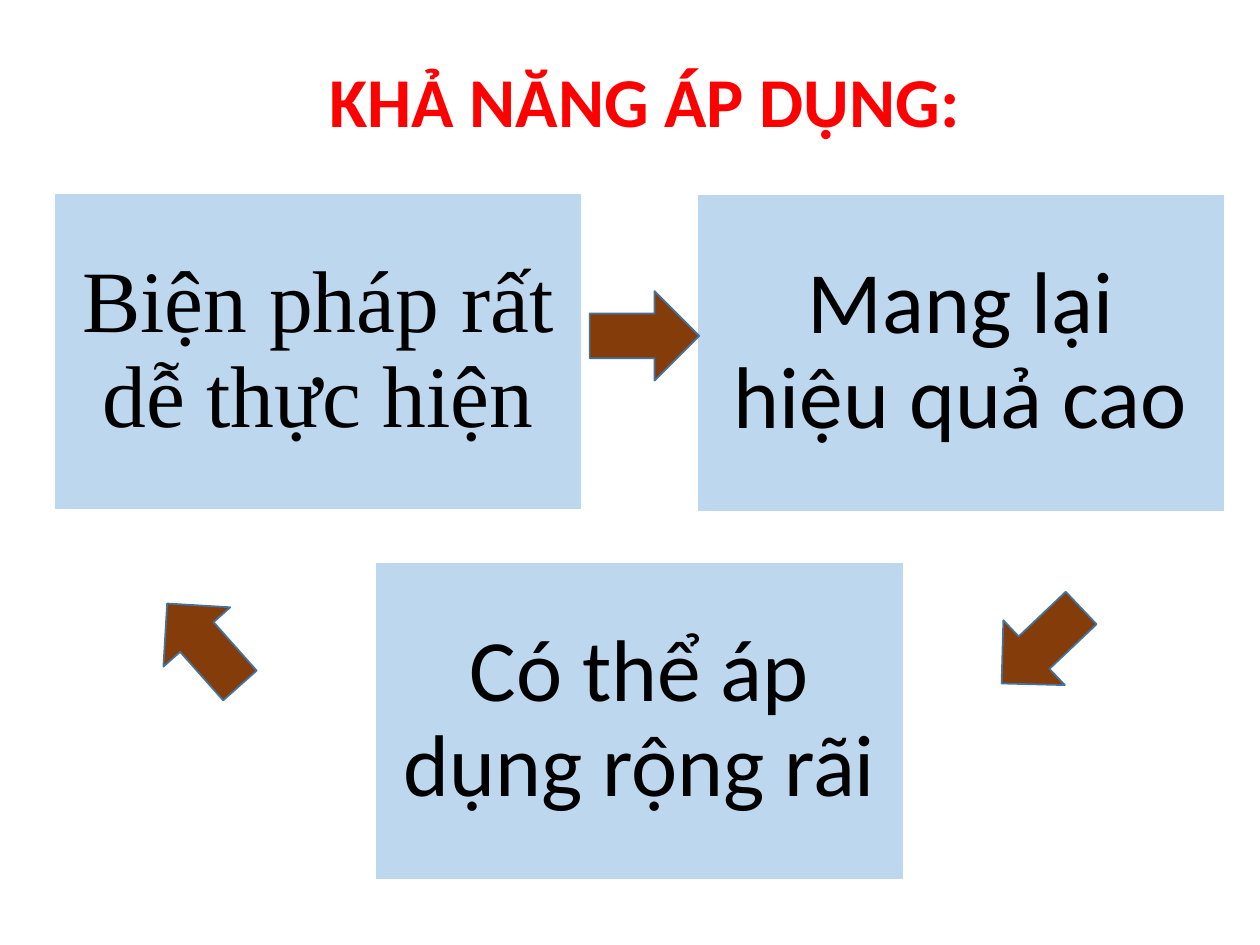
"""Build a slide with three statement boxes linked in a cycle by arrows."""
from dataclasses import dataclass

from pptx import Presentation
from pptx.dml.color import RGBColor as Color
from pptx.enum.shapes import MSO_SHAPE as Shape
from pptx.enum.text import MSO_ANCHOR as Anchor, PP_ALIGN as Align
from pptx.util import Inches, Pt


@dataclass(frozen=True)
class Theme:
    """Colours, fonts and type sizes of the slide."""
    title: str = "FF0000"
    text: str = "000000"
    box: str = "BDD7EE"
    box_line: str = "FFFFFF"
    arrow: str = "843C0B"
    arrow_line: str = "43739E"
    sans: str = "Calibri"
    serif: str = "Times New Roman"
    title_size: int = 40
    box_size: int = 50


def write(shape, text, *, font, size, color, bold=False, inset=(0.1, 0.05)):
    """Put centred text into a shape."""
    frame = shape.text_frame
    frame.word_wrap = True
    frame.vertical_anchor = Anchor.MIDDLE
    frame.margin_left = frame.margin_right = Inches(inset[0])
    frame.margin_top = frame.margin_bottom = Inches(inset[1])
    para = frame.paragraphs[0]
    para.alignment = Align.CENTER
    para.line_spacing = 0.9
    span = para.add_run()
    span.text = text
    span.font.name = font
    span.font.size = Pt(size)
    span.font.bold = bold
    span.font.color.rgb = Color.from_string(color)


class SlideBuilder:
    """Draws styled elements on the current slide."""

    def __init__(self, slide, theme):
        """Keep the slide and its theme."""
        self.slide = slide
        self.theme = theme

    def shape(self, kind, left, top, width, height, fill, line):
        """Add a flat filled shape with a thin outline."""
        shape = self.slide.shapes.add_shape(
            kind, Inches(left), Inches(top), Inches(width), Inches(height))
        shape.shadow.inherit = False
        shape.fill.solid()
        shape.fill.fore_color.rgb = Color.from_string(fill)
        shape.line.color.rgb = Color.from_string(line)
        shape.line.width = Pt(1)
        return shape

    def title(self, text):
        """Add the slide heading."""
        box = self.slide.shapes.add_textbox(
            Inches(0.85), Inches(0.48), Inches(8.53), Inches(0.71))
        write(box, text, font=self.theme.sans, size=self.theme.title_size,
              color=self.theme.title, bold=True)

    def statement(self, text, left, top, font):
        """Add a statement box."""
        theme = self.theme
        box = self.shape(Shape.RECTANGLE, left, top, 4.19, 2.52,
                         theme.box, theme.box_line)
        write(box, text, font=font, size=theme.box_size,
              color=theme.text, inset=(0.21, 0.21))

    def arrow(self, left, top, rotation):
        """Add a block arrow turned clockwise from pointing down."""
        arrow = self.shape(Shape.DOWN_ARROW, left, top, 0.71, 0.87,
                           self.theme.arrow, self.theme.arrow_line)
        arrow.rotation = rotation


def main():
    """Build and save the deck."""
    deck = Presentation()
    deck.slide_width, deck.slide_height = Inches(10), Inches(7.5)
    theme = Theme()
    page = SlideBuilder(deck.slides.add_slide(deck.slide_layouts[6]), theme)

    page.title("KHẢ NĂNG ÁP DỤNG:")
    page.statement("Biện pháp rất dễ thực hiện", 0.43, 1.53, theme.serif)
    page.statement("Mang lại hiệu quả cao", 5.53, 1.54, theme.sans)
    page.statement("Có thể áp dụng rộng rãi", 2.98, 4.46, theme.sans)
    for left, top, rotation in ((4.76, 2.23, 270), (1.26, 4.68, 138.4),
                                (7.91, 4.69, 46.5)):
        page.arrow(left, top, rotation)

    deck.save("out.pptx")


if __name__ == "__main__":
    main()
